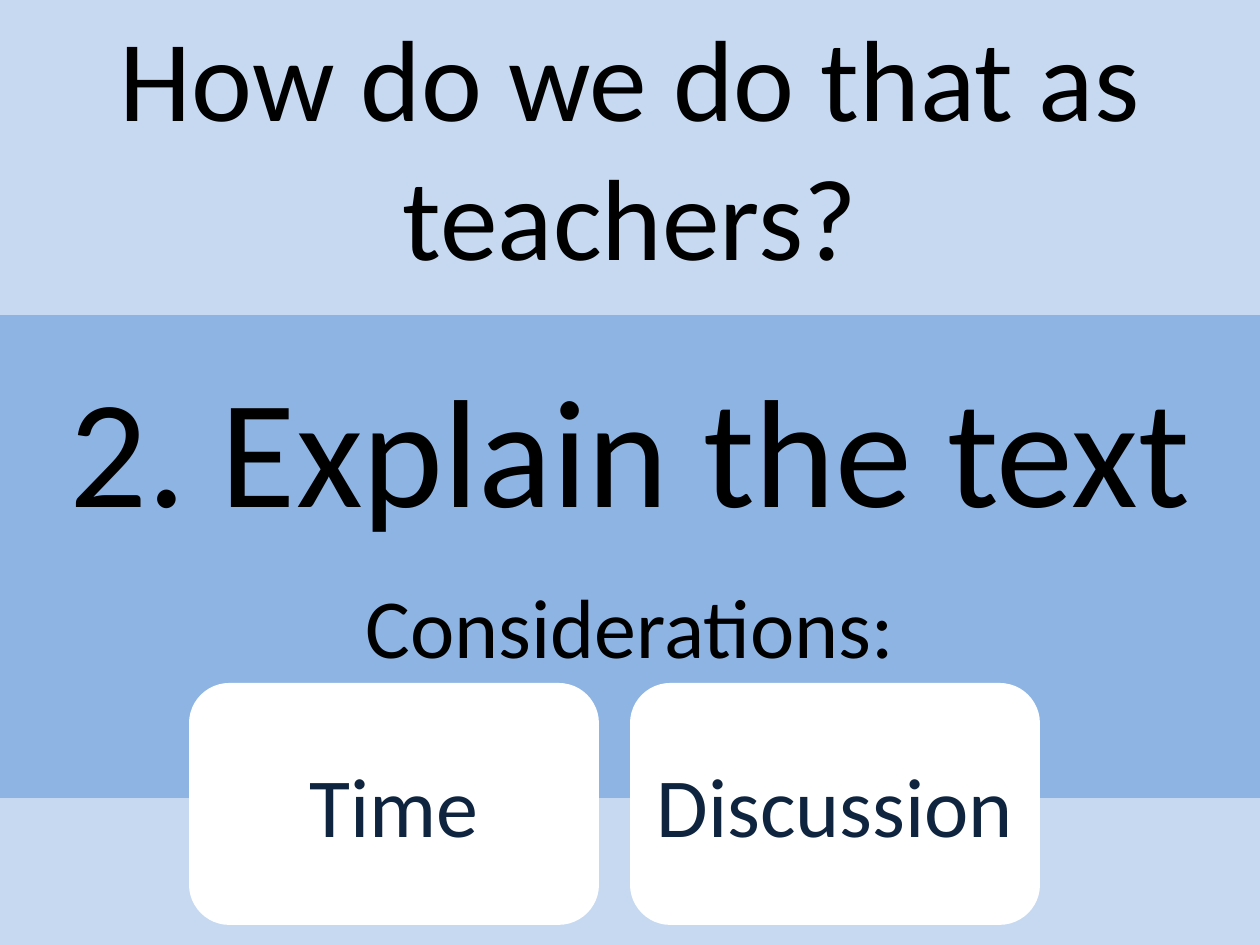
from dataclasses import dataclass

from pptx import Presentation
from pptx.dml.color import RGBColor
from pptx.enum.shapes import MSO_SHAPE as Shape
from pptx.enum.text import MSO_ANCHOR as Anchor, MSO_AUTO_SIZE as AutoSize, PP_ALIGN as Align
from pptx.shapes.autoshape import Shape as AutoShape
from pptx.slide import Slide
from pptx.util import Emu, Pt

PX_PER_INCH = 126
WIDTH, HEIGHT = 1260, 945
FONT = "Calibri"
COLORS = {
    "pale": "C6D9F1",
    "band": "8EB4E3",
    "card": "FFFFFF",
    "text": "000000",
    "card_text": "0F243E",
}


@dataclass(frozen=True)
class Box:
    left: int
    top: int
    width: int
    height: int

    def emu(self) -> tuple[Emu, ...]:
        return tuple(px(v) for v in (self.left, self.top, self.width, self.height))


@dataclass(frozen=True)
class Label:
    text: str
    size: int
    color: str = "text"
    anchor: Anchor = Anchor.TOP


def px(value: int) -> Emu:
    return Emu(round(value * 914400 / PX_PER_INCH))


def write(shape: AutoShape, label: Label) -> None:
    frame = shape.text_frame
    frame.word_wrap = True
    frame.auto_size = AutoSize.NONE
    frame.vertical_anchor = label.anchor
    paragraph = frame.paragraphs[0]
    paragraph.alignment = Align.CENTER
    run = paragraph.add_run()
    run.text = label.text
    run.font.name = FONT
    run.font.size = Pt(label.size)
    run.font.color.rgb = RGBColor.from_string(COLORS[label.color])


def add_panel(slide: Slide, kind: Shape, box: Box, color: str) -> AutoShape:
    shape = slide.shapes.add_shape(kind, *box.emu())
    shape.shadow.inherit = False
    shape.fill.solid()
    shape.fill.fore_color.rgb = RGBColor.from_string(COLORS[color])
    shape.line.fill.background()
    return shape


def add_text(slide: Slide, box: Box, label: Label) -> None:
    write(slide.shapes.add_textbox(*box.emu()), label)


def place_title(slide: Slide, box: Box, label: Label) -> None:
    title = slide.shapes.title
    title.left, title.top, title.width, title.height = box.emu()
    write(title, label)
    # Bring the title in front of the panels
    slide.shapes.element.append(title.element)


def main() -> None:
    presentation = Presentation()
    presentation.slide_width, presentation.slide_height = px(WIDTH), px(HEIGHT)
    slide = presentation.slides.add_slide(presentation.slide_layouts[5])

    # Background panels
    add_panel(slide, Shape.RECTANGLE, Box(0, 0, WIDTH, HEIGHT), "pale")
    add_panel(slide, Shape.RECTANGLE, Box(0, 315, WIDTH, 483), "band")

    # Title and step
    place_title(slide, Box(0, 0, WIDTH, 292), Label("How do we do that as teachers?", 66))
    add_text(slide, Box(0, 347, WIDTH, 199), Label("2. Explain the text", 88))

    # Consideration cards
    card_width, gap = 410, 31
    for index, text in enumerate(("Time", "Discussion")):
        box = Box(189 + index * (card_width + gap), 683, card_width, 242)
        card = add_panel(slide, Shape.ROUNDED_RECTANGLE, box, "card")
        write(card, Label(text, 48, "card_text", Anchor.MIDDLE))
    add_text(slide, Box(0, 568, WIDTH, 115), Label("Considerations:", 48))

    presentation.save("out.pptx")


if __name__ == "__main__":
    main()
